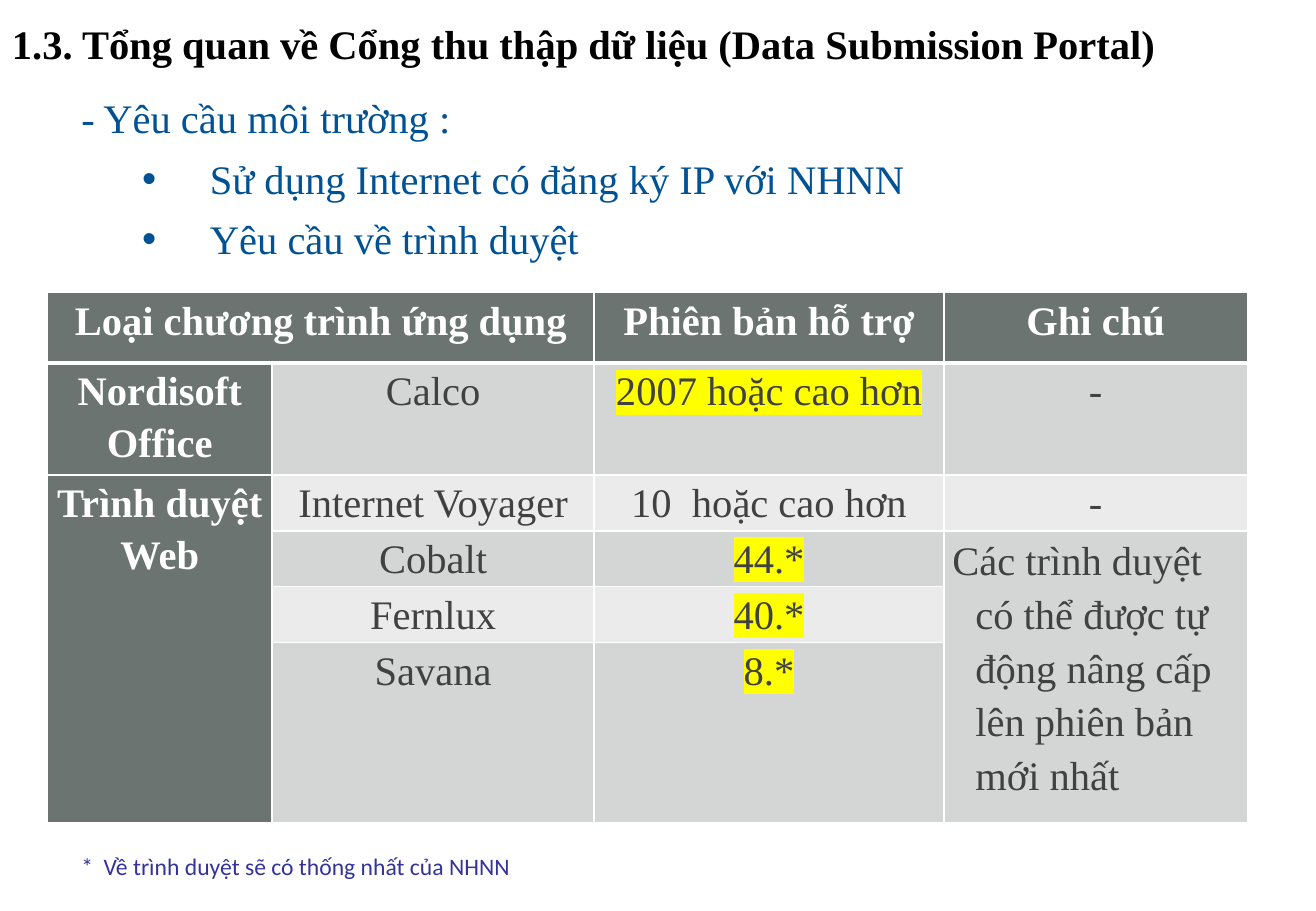
from dataclasses import dataclass

from lxml import etree
from pptx import Presentation
from pptx import util as u
from pptx.dml.color import RGBColor
from pptx.enum import text as t
from pptx.oxml import ns

COLORS = {
    "title": "000000", "body": "015294", "footnote": "333399",
    "header": "6C7472", "dark_band": "D4D6D5", "light_band": "EBEBEB",
    "cell": "414141", "white": "FFFFFF", "highlight": "FFFF00",
}
SERIF = "Times New Roman"
COLUMN_WIDTHS = (4.7, 6.73, 7.31, 6.35)
ROW_HEIGHTS = (1.47, 2.34, 1.17, 1.17, 1.17, 3.73)


@dataclass(frozen=True)
class Line:
    content: str
    color: str
    size: int = 24
    font: str = SERIF
    bold: bool = False
    bullet: bool = False
    highlighted: bool = False


@dataclass(frozen=True)
class TextBlock:
    left: float
    top: float
    width: float
    height: float
    lines: tuple[Line, ...]
    anchor: t.MSO_ANCHOR = t.MSO_ANCHOR.TOP


@dataclass(frozen=True)
class Entry:
    row: int
    column: int
    content: str
    row_span: int = 1
    column_span: int = 1
    highlighted: bool = False
    hanging: bool = False


TEXT_BLOCKS = (
    TextBlock(0, 0.25, 27.5, 1.32, (
        Line("1.3. Tổng quan về Cổng thu thập dữ liệu (Data Submission Portal)",
             "title", bold=True),
    ), t.MSO_ANCHOR.MIDDLE),
    TextBlock(1.45, 1.83, 26.2, 4, (
        Line("- Yêu cầu môi trường :", "body"),
        Line("Sử dụng Internet có đăng ký IP với NHNN", "body", bullet=True),
        Line("Yêu cầu về trình duyệt", "body", bullet=True),
    )),
    TextBlock(1.45, 17.7, 26, 0.9, (
        Line("*  Về trình duyệt sẽ có thống nhất của NHNN", "footnote",
             size=14, font="Calibri"),
    )),
)

ENTRIES = (
    Entry(0, 0, "Loại chương trình ứng dụng", column_span=2),
    Entry(0, 2, "Phiên bản hỗ trợ"),
    Entry(0, 3, "Ghi chú"),
    Entry(1, 0, "Nordisoft Office"),
    Entry(1, 1, "Calco"),
    Entry(1, 2, "2007 hoặc cao hơn", highlighted=True),
    Entry(1, 3, "-"),
    Entry(2, 0, "Trình duyệt Web", row_span=4),
    Entry(2, 1, "Internet Voyager"),
    Entry(2, 2, "10  hoặc cao hơn"),
    Entry(2, 3, "-"),
    Entry(3, 1, "Cobalt"),
    Entry(3, 2, "44.*", highlighted=True),
    Entry(3, 3, "Các trình duyệt có thể được tự động nâng cấp lên phiên bản mới nhất",
          row_span=3, hanging=True),
    Entry(4, 1, "Fernlux"),
    Entry(4, 2, "40.*", highlighted=True),
    Entry(5, 1, "Savana"),
    Entry(5, 2, "8.*", highlighted=True),
)


def set_attributes(target, values: dict) -> None:
    for name, value in values.items():
        setattr(target, name, value)


def set_indent(paragraph, margin: float, indent: float) -> None:
    properties = paragraph._p.get_or_add_pPr()
    properties.set("marL", str(u.Cm(margin)))
    properties.set("indent", str(u.Cm(indent)))


def write_line(paragraph, line: Line) -> None:
    if line.bullet:
        set_indent(paragraph, 2.69, -1.42)
        properties = paragraph._p.get_or_add_pPr()
        etree.SubElement(properties, ns.qn("a:buFont"), typeface="Arial")
        etree.SubElement(properties, ns.qn("a:buChar"), char="•")
    run = paragraph.add_run()
    run.text = line.content
    set_attributes(run.font, {"name": line.font, "size": u.Pt(line.size), "bold": line.bold})
    run.font.color.rgb = RGBColor.from_string(COLORS[line.color])
    if line.highlighted:
        highlight = etree.Element(ns.qn("a:highlight"))
        etree.SubElement(highlight, ns.qn("a:srgbClr"), val=COLORS["highlight"])
        run._r.rPr.find(ns.qn("a:solidFill")).addnext(highlight)


def add_text_block(slide, block: TextBlock) -> None:
    box = slide.shapes.add_textbox(
        *(u.Cm(value) for value in (block.left, block.top, block.width, block.height)))
    frame = box.text_frame
    set_attributes(frame, {"word_wrap": True, "vertical_anchor": block.anchor})
    for index, line in enumerate(block.lines):
        paragraph = frame.add_paragraph() if index else frame.paragraphs[0]
        if index:
            paragraph.space_before = u.Pt(7)
        write_line(paragraph, line)


def add_borders(cell, row: int) -> None:
    """Draw white cell edges, thicker between the header and the body."""
    widths = {"lnL": 1, "lnR": 1, "lnT": 3 if row == 1 else 1, "lnB": 3 if row == 0 else 1}
    properties = cell._tc.get_or_add_tcPr()
    for edge, width in widths.items():
        border = etree.SubElement(properties, ns.qn(f"a:{edge}"), w=str(u.Pt(width)))
        fill = etree.SubElement(border, ns.qn("a:solidFill"))
        etree.SubElement(fill, ns.qn("a:srgbClr"), val=COLORS["white"])


def band_color(row: int, column: int) -> str:
    if row == 0 or column == 0:
        return "header"
    return "dark_band" if row % 2 or column == 3 and row > 2 else "light_band"


def write_entry(table, entry: Entry) -> None:
    cell = table.cell(entry.row, entry.column)
    if entry.row_span > 1 or entry.column_span > 1:
        cell.merge(table.cell(entry.row + entry.row_span - 1,
                              entry.column + entry.column_span - 1))
    is_header = entry.row == 0 or entry.column == 0
    paragraph = cell.text_frame.paragraphs[0]
    set_attributes(paragraph, {
        "alignment": t.PP_ALIGN.LEFT if entry.hanging else t.PP_ALIGN.CENTER,
        "line_spacing": 1.2 if entry.hanging else 1.15,
    })
    if entry.hanging:
        set_indent(paragraph, 0.48, -0.48)
    write_line(paragraph, Line(entry.content, "white" if is_header else "cell",
                               bold=is_header, highlighted=entry.highlighted))


def add_requirements_table(slide) -> None:
    table = slide.shapes.add_table(
        len(ROW_HEIGHTS), len(COLUMN_WIDTHS), u.Cm(0.99), u.Cm(6.12),
        u.Cm(sum(COLUMN_WIDTHS)), u.Cm(sum(ROW_HEIGHTS))).table
    set_attributes(table, {"first_row": False, "horz_banding": False})
    for column, width in zip(table.columns, COLUMN_WIDTHS):
        column.width = u.Cm(width)
    for row, height in zip(table.rows, ROW_HEIGHTS):
        row.height = u.Cm(height)
    margins = {"margin_left": u.Cm(0.18), "margin_right": u.Cm(0.18),
               "margin_top": 0, "margin_bottom": 0}
    for row in range(len(ROW_HEIGHTS)):
        for column in range(len(COLUMN_WIDTHS)):
            cell = table.cell(row, column)
            set_attributes(cell, margins)
            add_borders(cell, row)
            cell.fill.solid()
            cell.fill.fore_color.rgb = RGBColor.from_string(COLORS[band_color(row, column)])
    for entry in ENTRIES:
        write_entry(table, entry)


def main() -> None:
    presentation = Presentation()
    set_attributes(presentation, {"slide_width": u.Cm(27.51), "slide_height": u.Cm(19.05)})
    slide = presentation.slides.add_slide(presentation.slide_layouts[6])
    for block in TEXT_BLOCKS:
        add_text_block(slide, block)
    add_requirements_table(slide)
    presentation.save("out.pptx")


if __name__ == "__main__":
    main()
